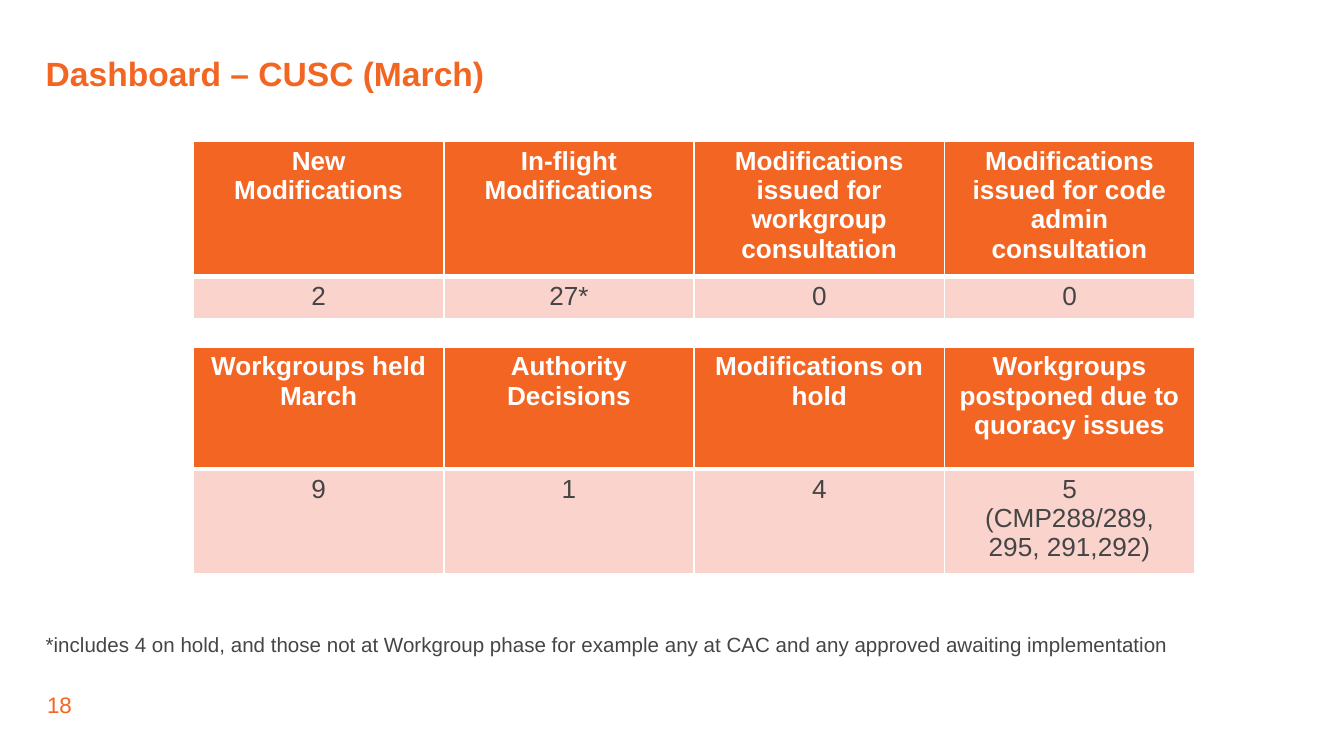
from pptx import Presentation
from pptx.dml.color import RGBColor
from pptx.enum.text import MSO_ANCHOR, PP_ALIGN
from pptx.oxml import parse_xml
from pptx.oxml.ns import nsdecls
from pptx.util import Inches, Pt

ORANGE = RGBColor(0xF2, 0x65, 0x22)
PINK = RGBColor(0xFA, 0xD3, 0xCD)
GREY = RGBColor(0x45, 0x45, 0x45)
WHITE = RGBColor(0xFF, 0xFF, 0xFF)

TABLE_LEFT, TABLE_WIDTH = 1.44, 7.45
HEADER_STYLE = {"size": Pt(14), "bold": True, "color": WHITE}
VALUE_STYLE = {"size": Pt(14), "bold": False, "color": GREY}

# Each table: top, row heights, headings, values
TABLES = [
    (1.05, (1.01, 0.31),
     ["New Modifications", "In-flight Modifications",
      "Modifications issued for workgroup consultation",
      "Modifications issued for code admin consultation"],
     ["2", "27*", "0", "0"]),
    (2.58, (0.91, 0.78),
     ["Workgroups held March", "Authority Decisions", "Modifications on hold",
      "Workgroups postponed due to quoracy issues"],
     ["9", "1", "4", "5\n(CMP288/289, 295, 291,292)"]),
]


def format_font(font, style):
    font.name = "Arial"
    for name, value in style.items():
        if name == "color":
            font.color.rgb = value
        else:
            setattr(font, name, value)


def fill_text(text_frame, text, style, alignment=PP_ALIGN.LEFT):
    text_frame.word_wrap = True
    text_frame.text = text
    for paragraph in text_frame.paragraphs:
        paragraph.alignment = alignment
        for run in paragraph.runs:
            format_font(run.font, style)


def place_text(shape, box, text, style):
    shape.left, shape.top, shape.width, shape.height = map(Inches, box)
    text_frame = shape.text_frame
    for side in ("left", "top", "right", "bottom"):
        setattr(text_frame, f"margin_{side}", 0)
    text_frame.vertical_anchor = MSO_ANCHOR.TOP
    fill_text(text_frame, text, style)


def add_label(slide, box, text, style):
    shape = slide.shapes.add_textbox(*map(Inches, box))
    place_text(shape, box, text, style)


def set_borders(cell, widths):
    properties = cell._tc.get_or_add_tcPr()
    for side, width in widths.items():
        properties.append(parse_xml(
            f'<a:ln{side} {nsdecls("a")} w="{Pt(width)}"><a:solidFill>'
            f'<a:srgbClr val="{WHITE}"/></a:solidFill></a:ln{side}>'))


def format_cell(cell, text, style, fill, borders):
    cell.margin_left = cell.margin_right = Inches(0.1)
    cell.margin_top = cell.margin_bottom = Inches(0.04)
    set_borders(cell, borders)
    cell.fill.solid()
    cell.fill.fore_color.rgb = fill
    fill_text(cell.text_frame, text, style, PP_ALIGN.CENTER)


def add_dashboard_table(slide, top, heights, headings, values):
    columns = len(headings)
    table = slide.shapes.add_table(
        2, columns, Inches(TABLE_LEFT), Inches(top),
        Inches(TABLE_WIDTH), Inches(sum(heights))).table
    table.horz_banding = False
    for column in table.columns:
        column.width = Inches(TABLE_WIDTH / columns)
    for row, height in zip(table.rows, heights):
        row.height = Inches(height)

    # A thick white rule parts the headings from the values
    rows = [
        (headings, HEADER_STYLE, ORANGE, {"L": 1, "R": 1, "T": 1, "B": 3}),
        (values, VALUE_STYLE, PINK, {"L": 1, "R": 1, "T": 3, "B": 1}),
    ]
    for row, (texts, style, fill, borders) in zip(table.rows, rows):
        for cell, text in zip(row.cells, texts):
            format_cell(cell, text, style, fill, borders)


def main():
    # Widescreen slide, 16:9
    presentation = Presentation()
    presentation.slide_width = Inches(10)
    presentation.slide_height = Inches(10 * 9 / 16)
    slide = presentation.slides.add_slide(presentation.slide_layouts[5])

    # Title
    title = slide.shapes.title
    place_text(title, (0.34, 0.45, 8.85, 0.38), "Dashboard – CUSC (March)",
               {"size": Pt(18), "bold": True, "color": ORANGE})
    title.text_frame.paragraphs[0].line_spacing = 0.8

    # Dashboard tables
    for top, heights, headings, values in TABLES:
        add_dashboard_table(slide, top, heights, headings, values)

    # Footnote and page number
    add_label(slide, (0.34, 4.7, 9.13, 0.19),
              "*includes 4 on hold, and those not at Workgroup phase for example "
              "any at CAC and any approved awaiting implementation",
              {"size": Pt(11), "color": GREY})
    add_label(slide, (0.35, 5.14, 0.91, 0.2), "18",
              {"size": Pt(12), "color": ORANGE})

    presentation.save("out.pptx")


if __name__ == "__main__":
    main()
